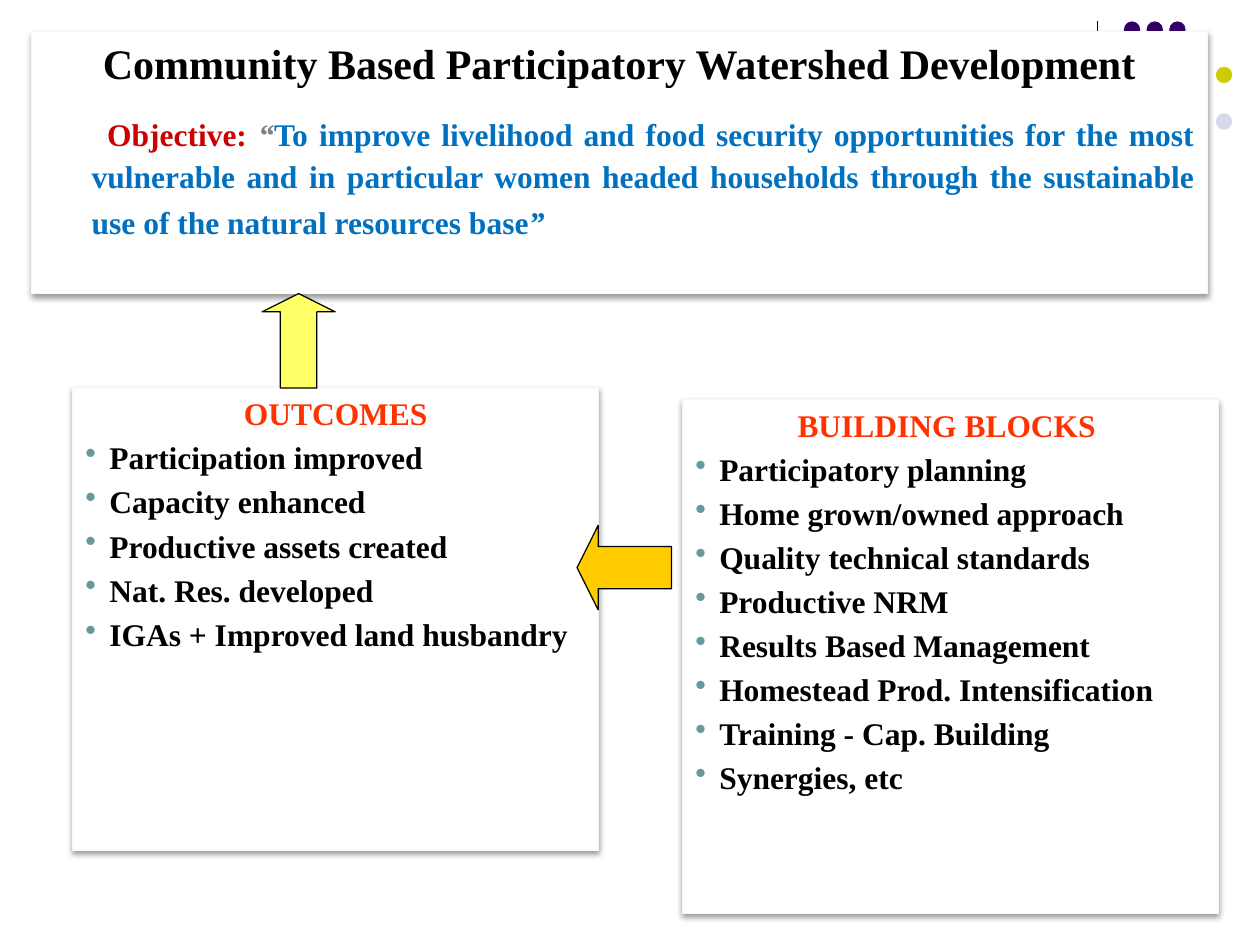
from dataclasses import dataclass

from lxml.etree import SubElement
from pptx import Presentation
from pptx.dml.color import RGBColor
from pptx.enum.shapes import MSO_CONNECTOR as CONN, MSO_SHAPE as SHAPE
from pptx.enum.text import MSO_ANCHOR as ANCHOR, PP_ALIGN as ALIGN
from pptx.oxml.ns import qn
from pptx.util import Inches, Pt


@dataclass(frozen=True)
class Theme:
    font: str = "Times New Roman"
    title_size: float = 24
    body_size: float = 18
    lead_size: float = 28
    tail_size: float = 23
    line_width: float = 0.75
    ink: str = "000000"
    panel: str = "FFFFFF"
    panel_edge: str = "F9F9F9"
    heading: str = "FF3300"
    label: str = "CC0000"
    quote: str = "808080"
    objective: str = "0070C0"
    bullet: str = "669999"
    up_arrow: str = "FFFF66"
    left_arrow: str = "FFCC00"
    purple: str = "330066"
    olive: str = "CCCC00"
    lilac: str = "D8D8EC"


def rgb(value):
    return RGBColor.from_string(value)


def add_run(p, text, font, size, color, bold=True, italic=False):
    r = p.add_run()
    r.text = text
    r.font.name = font
    r.font.size = Pt(size)
    r.font.color.rgb = rgb(color)
    r.font.bold = bold
    r.font.italic = italic


class SlideBuilder:
    def __init__(self, s, theme):
        self.s = s
        self.theme = theme

    def shape(self, kind, box, fill, line=None):
        sp = self.s.shapes.add_shape(kind, *map(Inches, box))
        sp.shadow.inherit = False
        sp.fill.solid()
        sp.fill.fore_color.rgb = rgb(fill)
        if line:
            sp.line.color.rgb = rgb(line)
            sp.line.width = Pt(self.theme.line_width)
        else:
            sp.line.fill.background()
        return sp

    def dot(self, left, top, color):
        self.shape(SHAPE.OVAL, (left, top, 0.13, 0.13), color)

    def arrow(self, kind, box, fill):
        sp = self.shape(kind, box, fill, self.theme.ink)
        sp.adjustments[0] = 0.5
        sp.adjustments[1] = 0.25

    def rule(self, x1, y1, x2, y2):
        c = self.s.shapes.add_connector(CONN.STRAIGHT, *map(Inches, (x1, y1, x2, y2)))
        c.line.color.rgb = rgb(self.theme.ink)
        c.line.width = Pt(self.theme.line_width)
        SubElement(c._element.spPr, qn("a:effectLst"))

    def panel(self, box):
        sp = self.shape(SHAPE.RECTANGLE, box, self.theme.panel, self.theme.panel_edge)
        effects = sp._element.spPr.find(qn("a:effectLst"))
        shadow = SubElement(effects, qn("a:outerShdw"), blurRad=str(Pt(3.1)),
                            dist=str(Pt(1.6)), dir="5400000", rotWithShape="0")
        color = SubElement(shadow, qn("a:srgbClr"), val=self.theme.ink)
        SubElement(color, qn("a:alpha"), val="38000")
        tf = sp.text_frame
        tf.word_wrap = True
        tf.vertical_anchor = ANCHOR.TOP
        return tf

    def paragraph(self, tf, runs, align=ALIGN.LEFT, margin=0.38, indent=-0.38, bullet=False):
        p = tf.paragraphs[0] if not tf.paragraphs[0].runs else tf.add_paragraph()
        p.alignment = align
        pPr = p._p.get_or_add_pPr()
        pPr.set("marL", str(Inches(margin)))
        pPr.set("indent", str(Inches(indent)))
        SubElement(SubElement(pPr, qn("a:spcBef")), qn("a:spcPct"), val="20000")
        if bullet:
            SubElement(SubElement(pPr, qn("a:buClr")), qn("a:srgbClr"), val=self.theme.bullet)
            SubElement(pPr, qn("a:buChar"), char="•")
        for text, style in runs:
            add_run(p, text, **{"font": self.theme.font, "size": self.theme.body_size,
                                "color": self.theme.ink, **style})

    def list_panel(self, box, heading, items):
        tf = self.panel(box)
        self.paragraph(tf, [(heading, {"color": self.theme.heading})], align=ALIGN.CENTER)
        for item in items:
            self.paragraph(tf, [(item, {})], margin=0.19, indent=-0.19, bullet=True)


def main():
    prs = Presentation()
    prs.slide_width, prs.slide_height = Inches(10), Inches(7.5)
    t = Theme()
    b = SlideBuilder(prs.slides.add_slide(prs.slide_layouts[6]), t)

    b.rule(8.71, 0.17, 8.71, 1.83)
    for column in range(3):
        b.dot(8.92 + 0.18 * column, 0.17, t.purple)
    b.dot(9.65, 0.53, t.olive)
    b.dot(9.65, 0.9, t.lilac)

    tf = b.panel((0.25, 0.25, 9.33, 2.08))
    b.paragraph(tf, [("Community Based Participatory Watershed Development",
                      {"size": t.title_size})], align=ALIGN.CENTER)
    b.paragraph(tf, [
        (" ", {"size": t.lead_size}),
        ("Objective: ", {"color": t.label}),
        ("“", {"color": t.quote, "italic": True}),
        ("To improve livelihood and food security opportunities for the most "
         "vulnerable and in particular women headed households through the "
         "sustainable use of the natural resources base", {"color": t.objective}),
        ("”", {"color": t.objective, "italic": True}),
        (" ", {"size": t.tail_size}),
    ], align=ALIGN.JUSTIFY, indent=0)

    b.list_panel((0.58, 3.08, 4.17, 3.67), "OUTCOMES", [
        "Participation improved",
        "Capacity enhanced",
        "Productive assets created",
        "Nat. Res. developed",
        "IGAs + Improved land husbandry",
    ])
    b.list_panel((5.42, 3.17, 4.25, 4.08), "BUILDING BLOCKS ", [
        "Participatory planning",
        "Home grown/owned approach",
        "Quality technical standards",
        "Productive NRM",
        "Results Based Management",
        "Homestead Prod. Intensification",
        "Training - Cap. Building",
        "Synergies, etc",
    ])

    b.arrow(SHAPE.LEFT_ARROW, (4.58, 4.17, 0.75, 0.67), t.left_arrow)
    b.arrow(SHAPE.UP_ARROW, (2.08, 2.33, 0.58, 0.75), t.up_arrow)

    prs.save("out.pptx")


if __name__ == "__main__":
    main()
